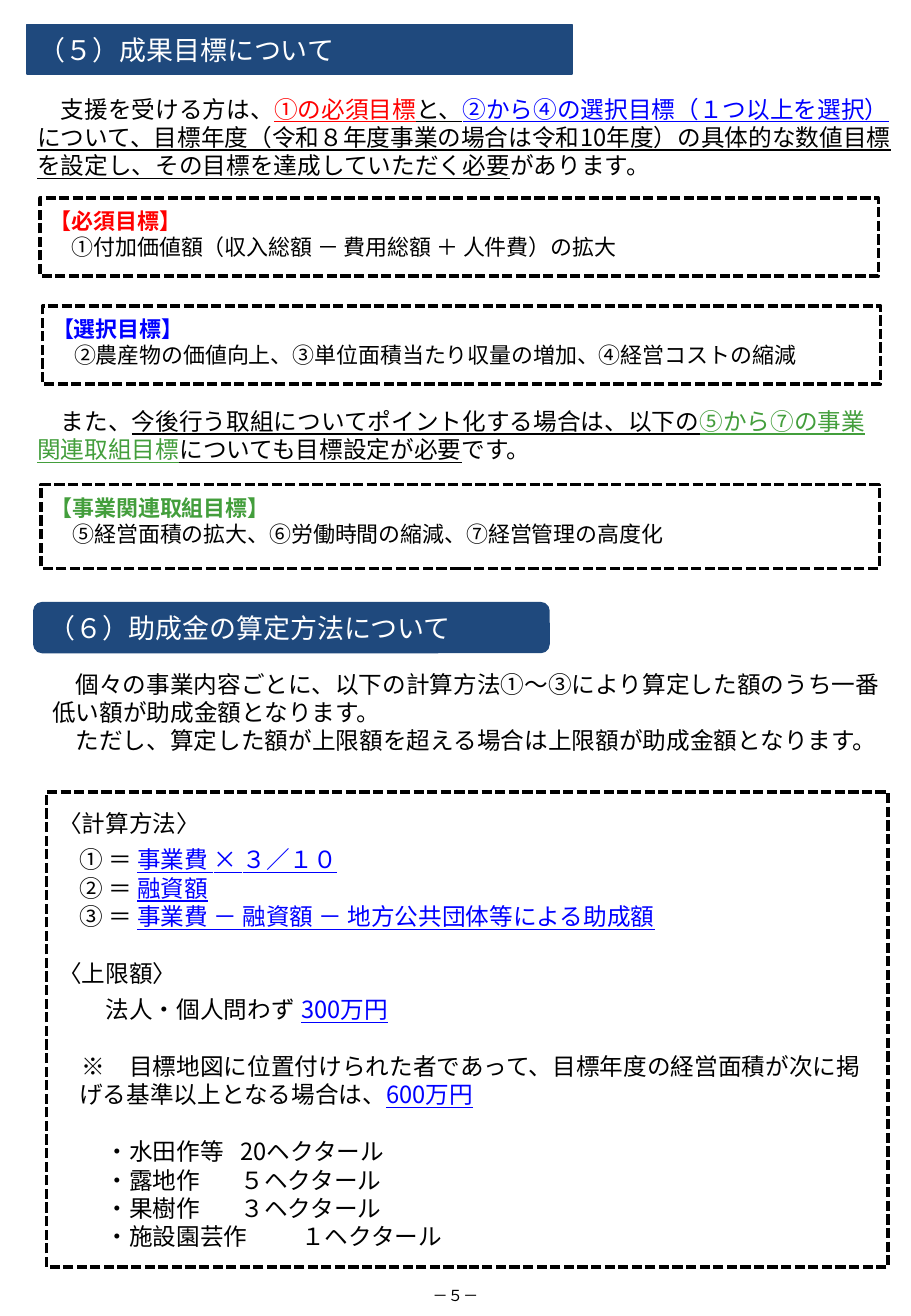
"""Build the page on performance targets and subsidy calculation."""
import dataclasses

import pptx
import pptx.dml.color
import pptx.enum.dml
import pptx.enum.shapes
import pptx.enum.text
import pptx.oxml.ns
import pptx.util
from lxml import etree
from pptx.util import Cm, Pt

FONT = "Noto Sans CJK JP"
BLACK, WHITE, NAVY = "000000", "FFFFFF", "1F497D"
RED, BLUE, GREEN = "FF0000", "0000FF", "439E3C"
LINE_FACTOR = 1.2


@dataclasses.dataclass
class Span:
    """Text with its own colour and emphasis."""
    text: str
    color: str = BLACK
    underline: bool = True
    bold: bool = False


@dataclasses.dataclass
class Para:
    """Paragraph content and layout, with lengths in points."""
    spans: list
    size: float = 14
    color: str = BLACK
    before: float = 0
    margin: float = 0
    indent: float = 0
    tab: float = 0
    align: str = "LEFT"


def rgb(color):
    """Turn a hex string into a colour."""
    return pptx.dml.color.RGBColor.from_string(color)


def add_child(parent, tag, **attributes):
    """Append a drawing element and return it."""
    return etree.SubElement(parent, pptx.oxml.ns.qn(tag), **attributes)


def format_paragraph(paragraph, para):
    """Apply spacing, indents, tab stop and font to a paragraph."""
    paragraph.alignment = getattr(pptx.enum.text.PP_ALIGN, para.align)
    paragraph.line_spacing = Pt(para.size * LINE_FACTOR)
    paragraph.space_before = Pt(para.before)
    properties = paragraph._p.get_or_add_pPr()
    properties.set("marL", str(Pt(para.margin)))
    properties.set("indent", str(Pt(para.indent)))
    if para.tab:
        stops = add_child(properties, "a:tabLst")
        add_child(stops, "a:tab", pos=str(Pt(para.tab)), algn="l")
    font = paragraph.font
    font.size = Pt(para.size)
    font.color.rgb = rgb(para.color)
    font.name = FONT
    add_child(properties.find(pptx.oxml.ns.qn("a:defRPr")), "a:ea", typeface=FONT)


def write(frame, paras):
    """Fill a text frame with paragraphs."""
    frame.word_wrap = True
    for index, para in enumerate(paras):
        paragraph = frame.add_paragraph() if index else frame.paragraphs[0]
        format_paragraph(paragraph, para)
        for span in para.spans:
            run = paragraph.add_run()
            if isinstance(span, str):
                run.text = span
                continue
            run.text = span.text
            if span.color != para.color:
                run.font.color.rgb = rgb(span.color)
            if span.underline:
                run.font.underline = True
            if span.bold:
                run.font.bold = True


def add_text(slide, place, paras):
    """Add a plain text box."""
    box = slide.shapes.add_textbox(*map(Cm, place))
    write(box.text_frame, paras)


def format_bar(bar, text):
    """Give a heading bar its fill, outline and text."""
    bar.fill.solid()
    bar.fill.fore_color.rgb = rgb(NAVY)
    bar.line.color.rgb = rgb(NAVY)
    bar.line.width = Pt(1)
    bar.text_frame.vertical_anchor = pptx.enum.text.MSO_ANCHOR.MIDDLE
    write(bar.text_frame, [Para([text], size=16, color=WHITE)])


def add_title_bar(slide, place, text):
    """Turn the title placeholder into a rounded heading bar."""
    title = slide.shapes.title
    title.left, title.top, title.width, title.height = map(Cm, place)
    geometry = add_child(title._element.spPr, "a:prstGeom", prst="roundRect")
    add_child(geometry, "a:avLst")
    format_bar(title, text)


def add_bar(slide, place, text):
    """Add a rounded heading bar."""
    kind = pptx.enum.shapes.MSO_SHAPE.ROUNDED_RECTANGLE
    bar = slide.shapes.add_shape(kind, *map(Cm, place))
    bar.shadow.inherit = False
    format_bar(bar, text)


def add_dashed_box(slide, place, paras):
    """Add a dashed frame with text and return it."""
    kind = pptx.enum.shapes.MSO_SHAPE.RECTANGLE
    box = slide.shapes.add_shape(kind, *map(Cm, place))
    box.shadow.inherit = False
    box.fill.background()
    box.line.color.rgb = rgb(BLACK)
    box.line.width = Pt(2)
    box.line.dash_style = pptx.enum.dml.MSO_LINE.SQUARE_DOT
    box.text_frame.vertical_anchor = pptx.enum.text.MSO_ANCHOR.MIDDLE
    write(box.text_frame, paras)
    return box


def add_target_box(slide, place, heading, color, targets):
    """Add a dashed frame listing one group of targets."""
    label = Span(heading, color, underline=False, bold=True)
    frame = add_dashed_box(slide, place, [
        Para([label], size=13, color=color),
        Para([targets], size=13, indent=13),
    ]).text_frame
    frame.vertical_anchor = pptx.enum.text.MSO_ANCHOR.TOP
    frame.margin_left = frame.margin_top = Cm(0.2)
    frame.margin_right = frame.margin_bottom = Cm(0.1)


def calculation_paras():
    """Return the paragraphs on formulas, limits and area standards."""
    formulas = ["事業費 × ３／１０", "融資額", "事業費 － 融資額 － 地方公共団体等による助成額"]
    areas = [("水田作等", "20ヘクタール", 150), ("露地作", "５ヘクタール", 154),
             ("果樹作", "３ヘクタール", 154), ("施設園芸作", "１ヘクタール", 146)]
    small_gap, blank_line = 4.8, 16.8
    paras = [Para(["〈計算方法〉"])]
    for index, (number, formula) in enumerate(zip("①②③", formulas)):
        paras.append(Para([f"{number} ＝ ", Span(formula, BLUE)], indent=12.4,
                          before=0 if index else small_gap))
    paras += [
        Para(["〈上限額〉"], before=blank_line),
        Para(["法人・個人問わず\t", Span("300万円", BLUE)], before=small_gap,
             indent=28, tab=172),
        Para(["※\u3000目標地図に位置付けられた者であって、目標年度の経営面積が次に掲げる基準以上となる場合は、".replace("\u3000", "　"),
              Span("600万円", BLUE)], before=blank_line, margin=12.4, indent=1.6),
    ]
    for index, (crop, area, tab) in enumerate(areas):
        paras.append(Para([f"・{crop}\t{area}"], indent=28, tab=tab,
                          before=0 if index else blank_line))
    return paras


def main():
    """Build and save the page."""
    deck = pptx.Presentation()
    deck.slide_width, deck.slide_height = Cm(19.05), Cm(27.51)
    slide = deck.slides.add_slide(deck.slide_layouts[5])

    add_title_bar(slide, (0.56, 0.51, 11.4, 1.04), "（５）成果目標について")
    add_text(slide, (0.53, 1.85, 18.39, 2.1), [Para([
        "支援を受ける方は、", Span("①の必須目標", RED), Span("と、"),
        Span("②から④の選択目標（１つ以上を選択）", BLUE),
        Span("について、目標年度（令和８年度事業の場合は令和10年度）の具体的な数値目標を設定し、"
             "その目標を達成していただく必要"),
        "があります。"], indent=14)])
    add_target_box(slide, (0.84, 4.14, 17.53, 1.63), "【必須目標】", RED,
                   "①付加価値額（収入総額 － 費用総額 ＋ 人件費）の拡大")
    add_target_box(slide, (0.89, 6.4, 17.53, 1.63), "【選択目標】", BLUE,
                   "②農産物の価値向上、③単位面積当たり収量の増加、④経営コストの縮減")
    add_text(slide, (0.53, 8.38, 18.03, 1.5), [Para([
        "また、", Span("今後行う取組についてポイント化する場合は、以下の"),
        Span("⑤から⑦の事業関連取組目標", GREEN),
        Span("についても目標設定が必要"), "です。"], indent=14)])
    add_target_box(slide, (0.86, 10.13, 17.53, 1.75), "【事業関連取組目標】", GREEN,
                   "⑤経営面積の拡大、⑥労働時間の縮減、⑦経営管理の高度化")

    add_bar(slide, (0.71, 12.6, 10.77, 1.04), "（６）助成金の算定方法について")
    add_text(slide, (0.84, 13.87, 18.21, 2.06), [
        Para(["個々の事業内容ごとに、以下の計算方法①～③により算定した額のうち一番低い額が助成金額となります。"],
             indent=14),
        Para(["ただし、算定した額が上限額を超える場合は上限額が助成金額となります。"], indent=14)])
    add_dashed_box(slide, (0.97, 16.56, 17.6, 9.93), calculation_paras())
    add_text(slide, (0, 26.77, 19.05, 0.64), [Para(["－５－"], size=9, align="CENTER")])
    deck.save("out.pptx")


if __name__ == "__main__":
    main()
